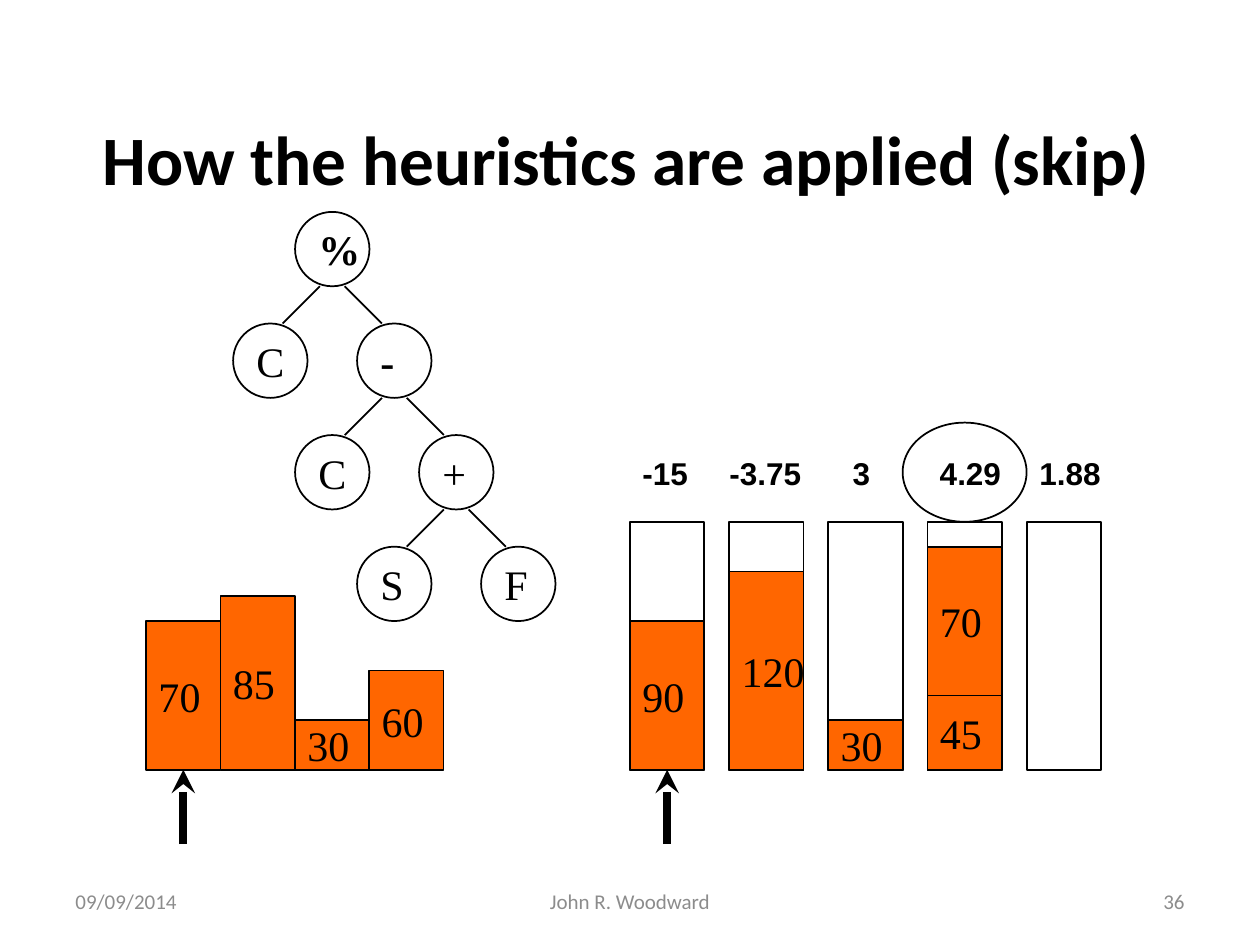
from lxml.etree import SubElement
from pptx import Presentation
from pptx.dml.color import RGBColor
from pptx.enum.shapes import MSO_CONNECTOR, MSO_SHAPE
from pptx.enum.text import MSO_ANCHOR as ANCHOR, MSO_AUTO_SIZE as FIT, PP_ALIGN as ALIGN
from pptx.oxml.ns import qn
from pptx.util import Pt

BLACK = RGBColor(0x00, 0x00, 0x00)
WHITE = RGBColor(0xFF, 0xFF, 0xFF)
ORANGE = RGBColor(0xFF, 0x66, 0x00)
GREY = RGBColor(0x8C, 0x8C, 0x8C)

UNIT = 14.17
WIDTH = 3 * UNIT
BASE = 439.9
BIN_HEIGHT = 10 * UNIT
BIN_STEP = 4 * UNIT
BIN_LEFT = 360
ITEM_LEFT = 83.5

prs = Presentation()
prs.slide_width, prs.slide_height = Pt(720), Pt(540)
slide = prs.slides.add_slide(prs.slide_layouts[5])
shapes = slide.shapes


def write(target, text, font="Times New Roman", size=24, color=BLACK, bold=False,
          align=ALIGN.LEFT, anchor=ANCHOR.MIDDLE, wrap=False, fit=FIT.NONE):
    frame = target.text_frame
    frame.auto_size = fit
    frame.word_wrap = wrap
    frame.vertical_anchor = anchor
    paragraph = frame.paragraphs[0]
    paragraph.alignment = align
    run = paragraph.add_run()
    run.text = text
    run.font.name, run.font.size, run.font.bold = font, Pt(size), bold
    run.font.color.rgb = color


def draw(kind, box, fill=None, text=None, bold=False):
    figure = shapes.add_shape(kind, *map(Pt, box))
    figure.shadow.inherit = False
    if fill is None:
        figure.fill.background()
    else:
        figure.fill.solid()
        figure.fill.fore_color.rgb = fill
    figure.line.color.rgb = BLACK
    figure.line.width = Pt(1)
    if text:
        write(figure, text, bold=bold)


title = shapes.title
title.left, title.top, title.width, title.height = Pt(34), Pt(36), Pt(648), Pt(108)
write(title, "How the heuristics are applied (skip)", font="Calibri", size=39.6,
      bold=True, align=ALIGN.CENTER, wrap=True)

scores = [("-15", 360, 40.3), ("-3.75", 409.7, 55.4), ("3", 480.2, 24.5),
          ("4.29", 529.9, 49.7), ("1.88", 586.8, 49.7)]
bins = [[("90", 6)], [("120", 8)], [("30", 2)], [("45", 3), ("70", 6)], []]
for index, contents in enumerate(bins):
    left = BIN_LEFT + index * BIN_STEP
    draw(MSO_SHAPE.RECTANGLE, (left, BASE - BIN_HEIGHT, WIDTH, BIN_HEIGHT), WHITE)
    top = BASE
    for label, units in contents:
        top -= units * UNIT
        draw(MSO_SHAPE.RECTANGLE, (left, top, WIDTH, units * UNIT), ORANGE, label)

for index, (label, units) in enumerate([("70", 6), ("85", 7), ("30", 2), ("60", 4)]):
    height = units * UNIT
    draw(MSO_SHAPE.RECTANGLE, (ITEM_LEFT + index * WIDTH, BASE - height, WIDTH, height),
         ORANGE, label)

ROOT_X, ROOT_Y = 189.9, 121.1
STEP_X, STEP_Y = 2.5 * UNIT, 4.5 * UNIT
SPREAD = UNIT / 2
nodes = [("%", 0, 0, True), ("C", -1, 1, False), ("-", 1, 1, True), ("C", 0, 2, False),
         ("+", 2, 2, False), ("S", 1, 3, False), ("F", 3, 3, False)]
for label, column, row, bold in nodes:
    draw(MSO_SHAPE.OVAL,
         (ROOT_X + column * STEP_X - WIDTH / 2, ROOT_Y + row * STEP_Y, WIDTH, WIDTH),
         WHITE, label, bold)

strokes = []
for level in range(3):
    parent_x = ROOT_X + level * STEP_X
    parent_bottom = ROOT_Y + level * STEP_Y + WIDTH
    for side in (-1, 1):
        strokes.append((parent_x + side * SPREAD, parent_bottom,
                        parent_x + side * (STEP_X - SPREAD), ROOT_Y + (level + 1) * STEP_Y,
                        1, False))
for left in (ITEM_LEFT, BIN_LEFT):
    middle = left + WIDTH / 2
    strokes.append((middle, BASE + WIDTH, middle, BASE, 4.5, True))

for *ends, weight, pointed in strokes:
    stroke = shapes.add_connector(MSO_CONNECTOR.STRAIGHT, *map(Pt, ends))
    stroke.line.color.rgb = BLACK
    stroke.line.width = Pt(weight)
    if pointed:
        SubElement(stroke.line._get_or_add_ln(), qn("a:tailEnd"), type="stealth")
    SubElement(stroke._element.spPr, qn("a:effectLst"))

for score, left, width in scores:
    box = shapes.add_textbox(Pt(left), Pt(255.6), Pt(width), Pt(29))
    write(box, score, font="Arial", size=18, bold=True, anchor=ANCHOR.TOP,
          fit=FIT.SHAPE_TO_FIT_TEXT)

draw(MSO_SHAPE.OVAL, (515.8, BASE - BIN_HEIGHT - 4 * UNIT, 5 * UNIT, 4 * UNIT))

for text, left, width, align in [("09/09/2014", 36, 168, ALIGN.LEFT),
                                 ("John R. Woodward", 246, 228, ALIGN.CENTER),
                                 ("36", 516, 168, ALIGN.RIGHT)]:
    footer = shapes.add_textbox(Pt(left), Pt(500.5), Pt(width), Pt(28.75))
    write(footer, text, font="Calibri", size=12, color=GREY, align=align, wrap=True)

prs.save("out.pptx")
